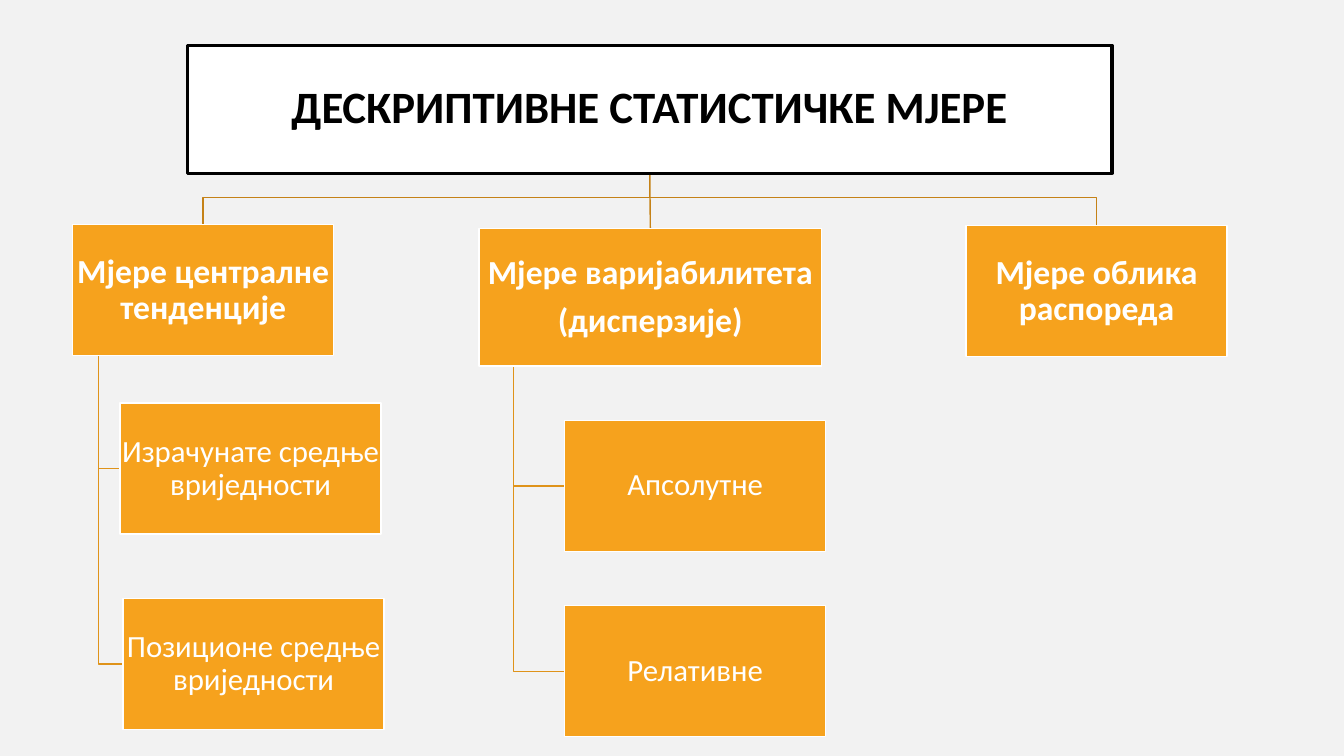
from pptx import Presentation
from pptx import util as u
from pptx.dml.color import RGBColor
from pptx.enum import shapes, text
from pptx.oxml.ns import qn
from lxml import etree

# Content: (paragraphs, left, top), sizes come from the box kind
TITLE = (["ДЕСКРИПТИВНЕ СТАТИСТИЧКЕ МЈЕРЕ"], 1.86, 0.45)
BRANCHES = [
    {"kind": "branch", "box": (["Мјере централне тенденције"], 0.72, 2.23),
     "leaves": [(["Израчунате средње вриједности"], 1.19, 4.0),
                (["Позиционе средње вриједности"], 1.22, 5.94)]},
    {"kind": "wide", "box": (["Мјере варијабилитета", "(дисперзије)"], 4.75, 2.27),
     "leaves": [(["Апсолутне"], 5.6, 4.17),
                (["Релативне"], 5.6, 6.01)]},
    {"kind": "branch", "box": (["Мјере облика распореда"], 9.58, 2.24),
     "leaves": []},
]

ORANGE, WHITE, BLACK = "F6A21D", "FFFFFF", "000000"
THEME = {
    "background": "F2F2F2", "font": "Calibri", "inset": 0.02,
    "trunk_line": "C58217", "leaf_line": "DF931A", "line_width": 1,
    "title": dict(size=(9.17, 1.27), pt=32, bold=True, fill=WHITE,
                  ink=BLACK, edge=BLACK, edge_pt=2.25),
    "branch": dict(size=(2.59, 1.3), pt=24, bold=True, fill=ORANGE,
                   ink=WHITE, edge=WHITE, edge_pt=1),
    "leaf": dict(size=(2.59, 1.3), pt=22, bold=False, fill=ORANGE,
                 ink=WHITE, edge=WHITE, edge_pt=1),
}
THEME["wide"] = {**THEME["branch"], "size": (3.4, 1.36)}
BUS_Y = 1.96          # height of the horizontal line under the title
STEM_SHARE = 0.1      # stem of the leaves, as a share of the branch width


def rgb(code):
    return RGBColor.from_string(code)


def add_box(slide, kind, box):
    paragraphs, left, top = box
    style = THEME[kind]
    node = slide.shapes.add_shape(
        shapes.MSO_SHAPE.RECTANGLE,
        *(u.Inches(v) for v in (left, top, *style["size"])))
    node.shadow.inherit = False
    node.fill.solid()
    node.fill.fore_color.rgb = rgb(style["fill"])
    node.line.color.rgb = rgb(style["edge"])
    node.line.width = u.Pt(style["edge_pt"])

    frame = node.text_frame
    frame.word_wrap = True
    frame.vertical_anchor = text.MSO_ANCHOR.MIDDLE
    frame.margin_left = frame.margin_right = u.Inches(THEME["inset"])
    frame.margin_top = frame.margin_bottom = u.Inches(THEME["inset"])
    for i, words in enumerate(paragraphs):
        paragraph = frame.add_paragraph() if i else frame.paragraphs[0]
        paragraph.alignment = text.PP_ALIGN.CENTER
        paragraph.line_spacing = 0.9
        if i < len(paragraphs) - 1:
            paragraph.space_after = u.Pt(0.35 * style["pt"])
        run = paragraph.add_run()
        run.text = words
        run.font.name = THEME["font"]
        run.font.size = u.Pt(style["pt"])
        run.font.bold = style["bold"]
        run.font.color.rgb = rgb(style["ink"])
    return node


def style_line(link, color):
    link.line.color.rgb = rgb(color)
    link.line.width = u.Pt(THEME["line_width"])


def add_bent_line(slide, points, color):
    start, *rest = [(u.Inches(x), u.Inches(y)) for x, y in points]
    builder = slide.shapes.build_freeform(*start)
    builder.add_line_segments(rest, close=False)
    link = builder.convert_to_shape()
    link.shadow.inherit = False
    link.fill.background()
    style_line(link, color)


def main():
    prs = Presentation()
    prs.slide_width, prs.slide_height = u.Inches(13.33), u.Inches(7.5)
    slide = prs.slides.add_slide(prs.slide_layouts[6])
    slide.background.fill.solid()
    slide.background.fill.fore_color.rgb = rgb(THEME["background"])

    _, title_left, title_top = TITLE
    title_width, title_height = THEME["title"]["size"]
    trunk_x = title_left + title_width / 2
    title_bottom = title_top + title_height

    # Bent lines, behind the boxes
    for branch in BRANCHES:
        _, left, top = branch["box"]
        width, height = THEME[branch["kind"]]["size"]
        if branch["kind"] != "wide":
            middle = left + width / 2
            add_bent_line(slide, [(trunk_x, title_bottom), (trunk_x, BUS_Y),
                                  (middle, BUS_Y), (middle, top)],
                          THEME["trunk_line"])
        stem_x = left + STEM_SHARE * width
        for _, leaf_left, leaf_top in branch["leaves"]:
            leaf_y = leaf_top + THEME["leaf"]["size"][1] / 2
            add_bent_line(slide, [(stem_x, top + height), (stem_x, leaf_y),
                                  (leaf_left, leaf_y)], THEME["leaf_line"])

    # Straight line to the middle branch
    trunk = slide.shapes.add_connector(shapes.MSO_CONNECTOR.STRAIGHT, 0, 0, 0, 0)
    style_line(trunk, THEME["trunk_line"])
    etree.SubElement(trunk._element.spPr, qn("a:effectLst"))

    # Boxes
    trunk.begin_connect(add_box(slide, "title", TITLE), 2)
    for branch in BRANCHES:
        node = add_box(slide, branch["kind"], branch["box"])
        if branch["kind"] == "wide":
            trunk.end_connect(node, 0)
        for leaf in branch["leaves"]:
            add_box(slide, "leaf", leaf)

    prs.save("out.pptx")


if __name__ == "__main__":
    main()
